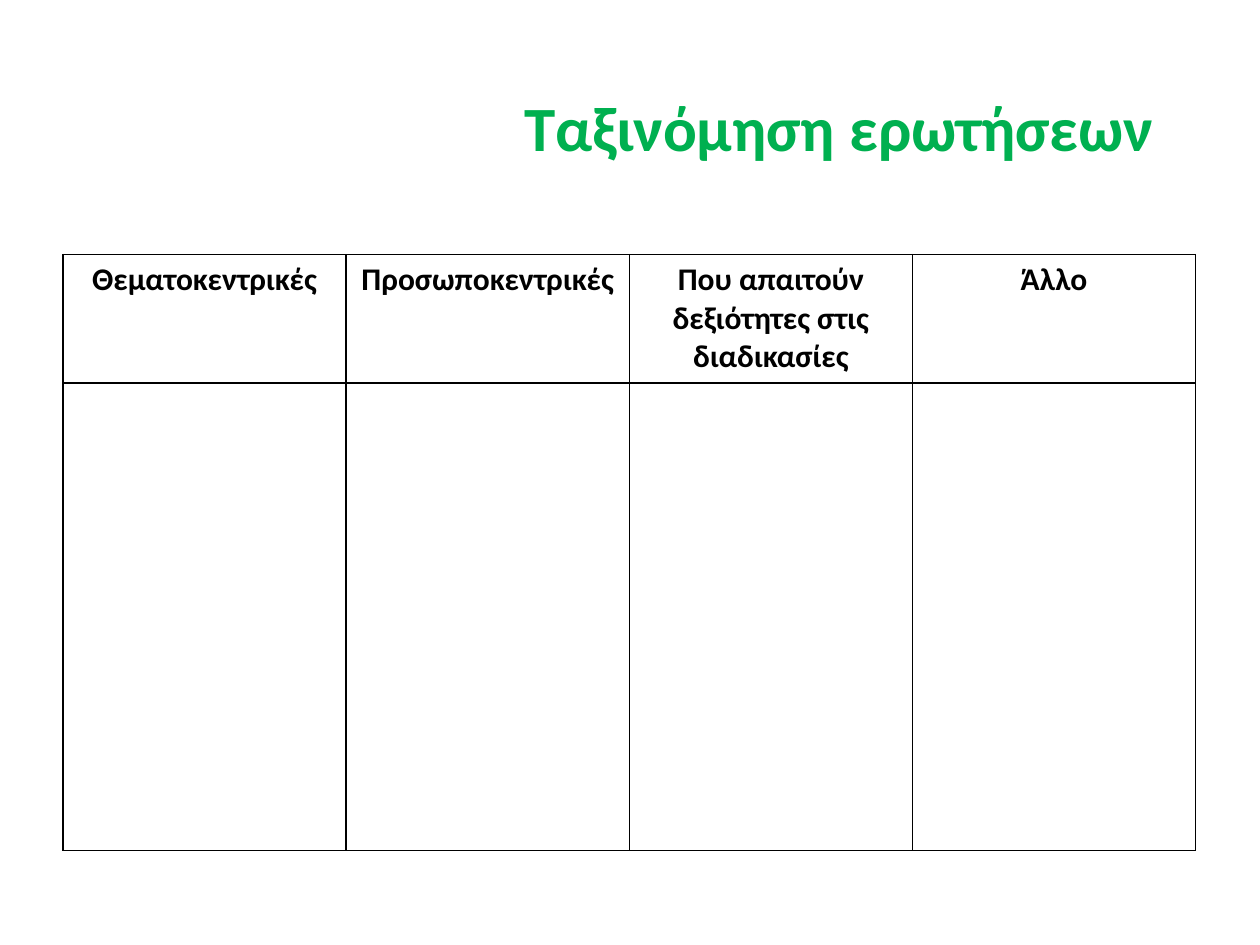
from lxml import etree
from pptx import Presentation
from pptx.dml.color import RGBColor
from pptx.enum import text
from pptx.oxml.ns import qn
from pptx.util import Inches, Pt

GREEN = RGBColor(0x00, 0xB0, 0x50)
BLACK = RGBColor(0x00, 0x00, 0x00)
TITLE_FONT = {"name": "Calibri", "size": Pt(36), "bold": True}
HEADER_FONT = {"name": "Calibri", "size": Pt(18), "bold": True}
HEADERS = [
    "Θεματοκεντρικές",
    "Προσωποκεντρικές",
    "Που απαιτούν δεξιότητες στις διαδικασίες",
    "Άλλο",
]
ROW_HEIGHTS = [Inches(1.02), Inches(3.71)]


def write_centred(frame, words, font, colour):
    """Write one centred paragraph in the given format."""
    para = frame.paragraphs[0]
    para.alignment = text.PP_ALIGN.CENTER
    span = para.add_run()
    span.text = words
    for name, value in font.items():
        setattr(span.font, name, value)
    span.font.color.rgb = colour


def add_title(page, left, top, width, height):
    """Place the slide title in its box."""
    box = page.shapes.add_textbox(left, top, width, height)
    frame = box.text_frame
    frame.word_wrap = True
    frame.vertical_anchor = text.MSO_ANCHOR.MIDDLE
    write_centred(frame, "Ταξινόμηση ερωτήσεων", TITLE_FONT, GREEN)


def set_borders(cell, colour, width):
    """Draw a solid line on all four sides of a cell."""
    properties = cell._tc.get_or_add_tcPr()
    for index, side in enumerate(("a:lnL", "a:lnR", "a:lnT", "a:lnB")):
        line = etree.Element(qn(side), w=str(int(width)))
        fill = etree.SubElement(line, qn("a:solidFill"))
        etree.SubElement(fill, qn("a:srgbClr"), val=str(colour))
        properties.insert(index, line)


def add_question_table(page, left, top, width):
    """Place the table of question types with an empty row to fill in."""
    graphic = page.shapes.add_table(
        len(ROW_HEIGHTS), len(HEADERS), left, top, width, sum(ROW_HEIGHTS)
    )
    table = graphic.table
    table.first_row = table.horz_banding = False
    for row, height in zip(table.rows, ROW_HEIGHTS):
        row.height = height
    for cell in table.iter_cells():
        cell.fill.background()
        set_borders(cell, BLACK, Pt(1))
    for column, words in enumerate(HEADERS):
        write_centred(table.cell(0, column).text_frame, words, HEADER_FONT, BLACK)


def main():
    """Build and save the slide."""
    deck = Presentation()
    deck.slide_width, deck.slide_height = Inches(10), Inches(7.5)
    page = deck.slides.add_slide(deck.slide_layouts[6])
    add_title(page, Inches(3.82), Inches(0.3), Inches(5.68), Inches(1.4))
    add_question_table(page, Inches(0.5), Inches(2.02), Inches(8.99))
    deck.save("out.pptx")


if __name__ == "__main__":
    main()
